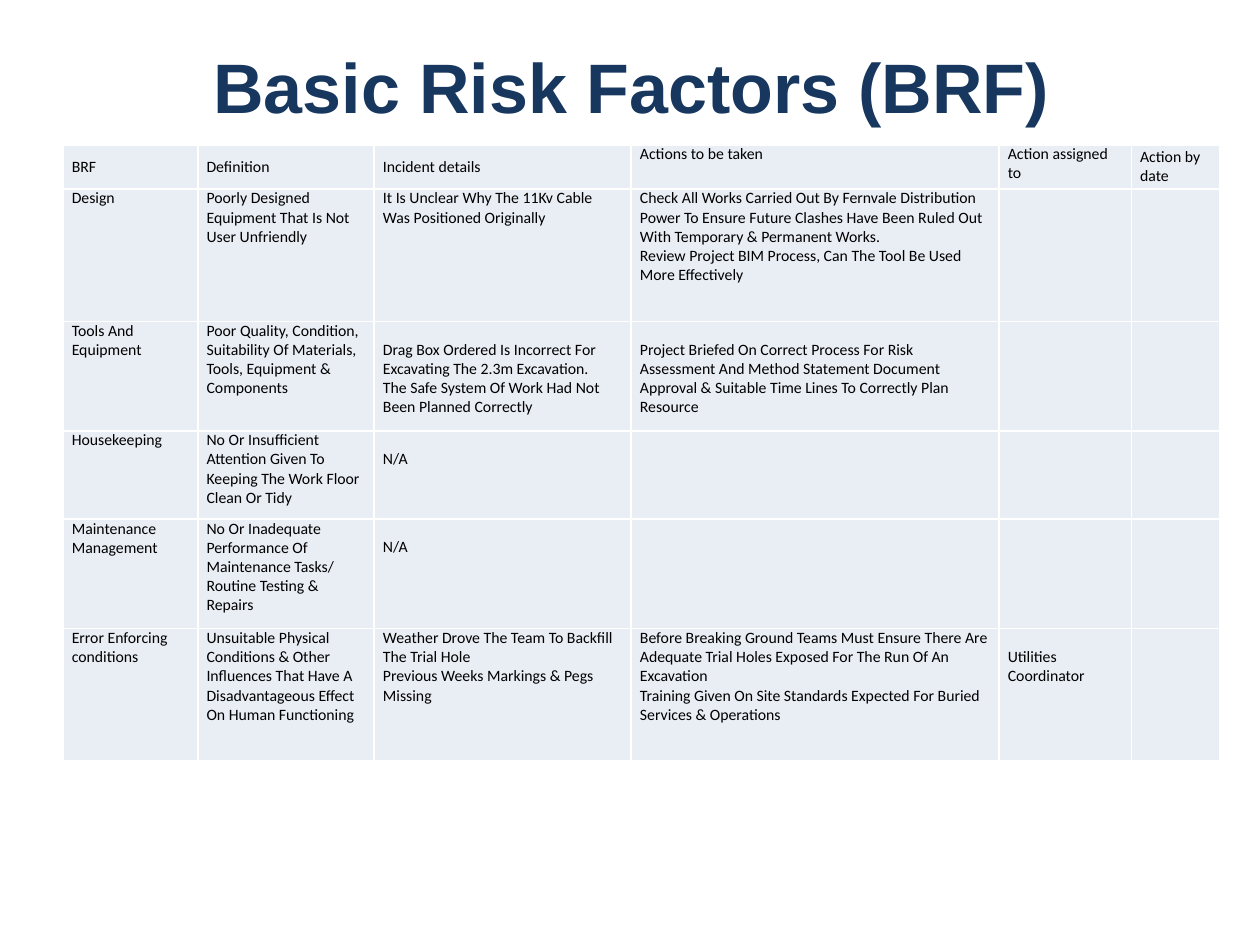
from typing import NamedTuple

from lxml.etree import SubElement
from pptx import Presentation
from pptx.dml.color import RGBColor
from pptx.enum.text import MSO_ANCHOR, PP_ALIGN
from pptx.oxml.ns import qn
from pptx.util import Inches, Pt

COLORS = {"title": "17375E", "text": "000000", "cell": "E9EDF4", "edge": "FFFFFF"}
TITLE = {"name": "Arial", "size": Pt(40), "bold": True}
BODY = {"name": "Calibri", "size": Pt(9), "bold": False}
WIDTHS = (1.07, 1.4, 2.04, 2.92, 1.05, 0.7)
HEIGHTS = (0.35, 1.05, 0.87, 0.7, 0.87, 1.05)
LINE = 0.15  # height of one line of body text


class Entry(NamedTuple):
    """Text of one cell, its paragraphs split by newlines."""
    text: str = ""
    top: float = 0
    mid: bool = False


class Factor(NamedTuple):
    name: Entry
    sense: Entry
    event: Entry
    action: Entry = Entry()
    owner: Entry = Entry()
    date: Entry = Entry()


ROWS = (
    Factor(
        Entry("BRF", mid=True),
        Entry("Definition", mid=True),
        Entry("Incident details", mid=True),
        Entry("Actions to be taken"),
        Entry("Action assigned to"),
        Entry("Action by date", mid=True),
    ),
    Factor(
        Entry("Design"),
        Entry("Poorly Designed Equipment That Is Not User Unfriendly"),
        Entry("It Is Unclear Why The 11Kv Cable Was Positioned Originally"),
        Entry("Check All Works Carried Out By Fernvale Distribution Power To Ensure "
              "Future Clashes Have Been Ruled Out With Temporary & Permanent Works.\n"
              "Review Project BIM Process, Can The Tool Be Used More Effectively"),
    ),
    Factor(
        Entry("Tools And Equipment"),
        Entry("Poor Quality, Condition, Suitability Of Materials, Tools, "
              "Equipment & Components"),
        Entry("Drag Box Ordered Is Incorrect For Excavating The 2.3m Excavation.\n"
              "The Safe System Of Work Had Not Been Planned Correctly", LINE),
        Entry("Project Briefed On Correct Process For Risk Assessment And Method "
              "Statement Document Approval & Suitable Time Lines To Correctly Plan "
              "Resource", LINE),
    ),
    Factor(
        Entry("Housekeeping"),
        Entry("No Or Insufficient Attention Given To Keeping The Work Floor "
              "Clean Or Tidy"),
        Entry("N/A", LINE),
    ),
    Factor(
        Entry("Maintenance Management"),
        Entry("No Or Inadequate Performance Of Maintenance Tasks/ Routine "
              "Testing & Repairs"),
        Entry("N/A", LINE),
    ),
    Factor(
        Entry("Error Enforcing conditions"),
        Entry("Unsuitable Physical Conditions & Other Influences That Have A "
              "Disadvantageous Effect On Human Functioning"),
        Entry("Weather Drove The Team To Backfill The Trial Hole\n"
              "Previous Weeks Markings & Pegs Missing"),
        Entry("Before Breaking Ground Teams Must Ensure There Are Adequate Trial "
              "Holes Exposed For The Run Of An Excavation\n"
              "Training Given On Site Standards Expected For Buried Services & "
              "Operations"),
        Entry("Utilities Coordinator", LINE),
    ),
)


def style(font, values: dict, color: str) -> None:
    for key, value in values.items():
        setattr(font, key, value)
    font.color.rgb = RGBColor.from_string(COLORS[color])


def add_edges(cell) -> None:
    props = cell._tc.get_or_add_tcPr()
    for side in ("lnL", "lnR", "lnT", "lnB"):
        line = SubElement(props, qn(f"a:{side}"), w=str(Pt(1)))
        fill = SubElement(line, qn("a:solidFill"))
        SubElement(fill, qn("a:srgbClr"), val=COLORS["edge"])


def draw_cell(cell, entry: Entry) -> None:
    add_edges(cell)
    cell.fill.solid()
    cell.fill.fore_color.rgb = RGBColor.from_string(COLORS["cell"])
    cell.margin_left = cell.margin_right = Inches(0.07)
    cell.margin_top = Inches(entry.top)
    cell.margin_bottom = 0
    cell.vertical_anchor = MSO_ANCHOR.MIDDLE if entry.mid else MSO_ANCHOR.TOP
    if entry.text:
        cell.text = entry.text
    for para in cell.text_frame.paragraphs:
        for run in para.runs:
            style(run.font, BODY, "text")


def draw_title(slide, text: str) -> None:
    title = slide.shapes.title
    title.left, title.top = Inches(0.51), Inches(0.05)
    title.width, title.height = Inches(9), Inches(1.25)
    frame = title.text_frame
    frame.text = text
    frame.vertical_anchor = MSO_ANCHOR.MIDDLE
    para = frame.paragraphs[0]
    para.alignment = PP_ALIGN.CENTER
    style(para.runs[0].font, TITLE, "title")


def draw_table(slide, rows: tuple[Factor, ...]) -> None:
    table = slide.shapes.add_table(
        len(rows), len(WIDTHS), Inches(0.5), Inches(1.15),
        Inches(sum(WIDTHS)), Inches(sum(HEIGHTS))).table
    table.first_row = table.horz_banding = False
    for col, width in zip(table.columns, WIDTHS):
        col.width = Inches(width)
    for row, height, factor in zip(table.rows, HEIGHTS, rows):
        row.height = Inches(height)
        for cell, entry in zip(row.cells, factor):
            draw_cell(cell, entry)


def main() -> None:
    deck = Presentation()
    deck.slide_width, deck.slide_height = Inches(10), Inches(7.5)
    slide = deck.slides.add_slide(deck.slide_layouts[5])
    draw_title(slide, "Basic Risk Factors (BRF)")
    draw_table(slide, ROWS)
    deck.save("out.pptx")


if __name__ == "__main__":
    main()
